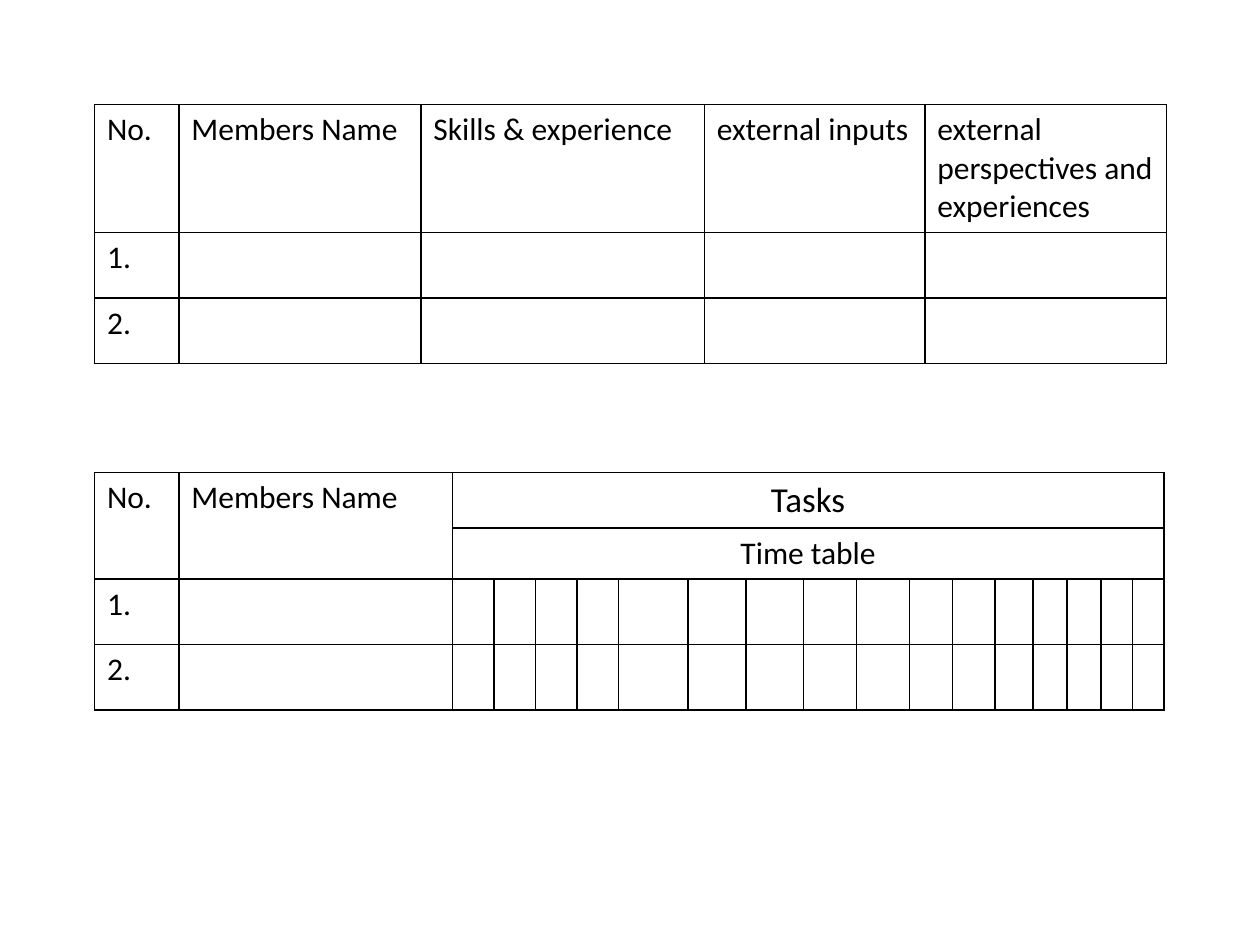
from dataclasses import dataclass

from lxml.etree import SubElement
from pptx import Presentation
from pptx.dml.color import RGBColor
from pptx.enum.text import PP_ALIGN
from pptx.oxml.ns import qn
from pptx.util import Inches, Pt


@dataclass(frozen=True)
class Theme:
    font: str = "Calibri"
    ink: str = "000000"
    body_size: int = 18
    heading_size: int = 20
    border_width: int = 1


THEME = Theme()
MEMBER_NUMBERS = ["1.", "2."]
ROW_HEIGHT = 0.52


def add_borders(cell):
    properties = cell._tc.get_or_add_tcPr()
    for side in ("lnL", "lnR", "lnT", "lnB"):
        line = SubElement(properties, qn(f"a:{side}"), w=str(Pt(THEME.border_width)))
        fill = SubElement(line, qn("a:solidFill"))
        SubElement(fill, qn("a:srgbClr"), val=THEME.ink)


def write_cell(cell, text, size=THEME.body_size, alignment=PP_ALIGN.LEFT):
    paragraph = cell.text_frame.paragraphs[0]
    paragraph.alignment = alignment
    run = paragraph.add_run()
    run.text = text
    font_format = {"name": THEME.font, "size": Pt(size), "bold": False}
    for attribute, value in font_format.items():
        setattr(run.font, attribute, value)
    run.font.color.rgb = RGBColor.from_string(THEME.ink)


def add_grid(slide, box, column_widths, row_heights):
    """Add an unfilled table with a thin border round every cell."""
    frame = slide.shapes.add_table(
        len(row_heights), len(column_widths), *map(Inches, box)
    )
    table = frame.table
    for attribute in ("first_row", "horz_banding"):
        setattr(table, attribute, False)
    for column, width in zip(table.columns, column_widths):
        column.width = Inches(width)
    for row, height in zip(table.rows, row_heights):
        row.height = Inches(height)
    for cell in table.iter_cells():
        add_borders(cell)
        cell.fill.background()
    return table


def write_member_numbers(table, first_row):
    for row, number in enumerate(MEMBER_NUMBERS, start=first_row):
        write_cell(table.cell(row, 0), number)


def add_skills_table(slide, box):
    headings = {
        "No.": 0.67,
        "Members Name": 1.92,
        "Skills & experience": 2.25,
        "external inputs": 1.75,
        "external perspectives and experiences": 1.92,
    }
    row_heights = [ROW_HEIGHT] * (1 + len(MEMBER_NUMBERS))
    table = add_grid(slide, box, list(headings.values()), row_heights)
    for column, heading in enumerate(headings):
        write_cell(table.cell(0, column), heading)
    write_member_numbers(table, first_row=1)


def add_tasks_table(slide, box):
    label_widths = {"No.": 0.67, "Members Name": 2.17}
    period_widths = (
        [0.33] * 4 + [0.55] + [0.46] * 2 + [0.42] * 2
        + [0.34] * 2 + [0.3] + [0.27] * 2 + [0.25] * 2
    )
    column_widths = [*label_widths.values(), *period_widths]
    row_heights = [0.42, 0.35] + [ROW_HEIGHT] * len(MEMBER_NUMBERS)
    table = add_grid(slide, box, column_widths, row_heights)

    for column, label in enumerate(label_widths):
        table.cell(0, column).merge(table.cell(1, column))
        write_cell(table.cell(0, column), label)

    first_period = len(label_widths)
    last_period = len(column_widths) - 1
    headings = [("Tasks", THEME.heading_size), ("Time table", THEME.body_size)]
    for row, (heading, size) in enumerate(headings):
        cell = table.cell(row, first_period)
        cell.merge(table.cell(row, last_period))
        write_cell(cell, heading, size, PP_ALIGN.CENTER)
    write_member_numbers(table, first_row=len(headings))


def main():
    presentation = Presentation()
    presentation.slide_width = Inches(10)
    presentation.slide_height = Inches(7.5)
    slide = presentation.slides.add_slide(presentation.slide_layouts[6])
    add_skills_table(slide, (0.75, 0.83, 8.5, 1.58))
    add_tasks_table(slide, (0.75, 3.75, 8.5, 1.82))
    presentation.save("out.pptx")


if __name__ == "__main__":
    main()
